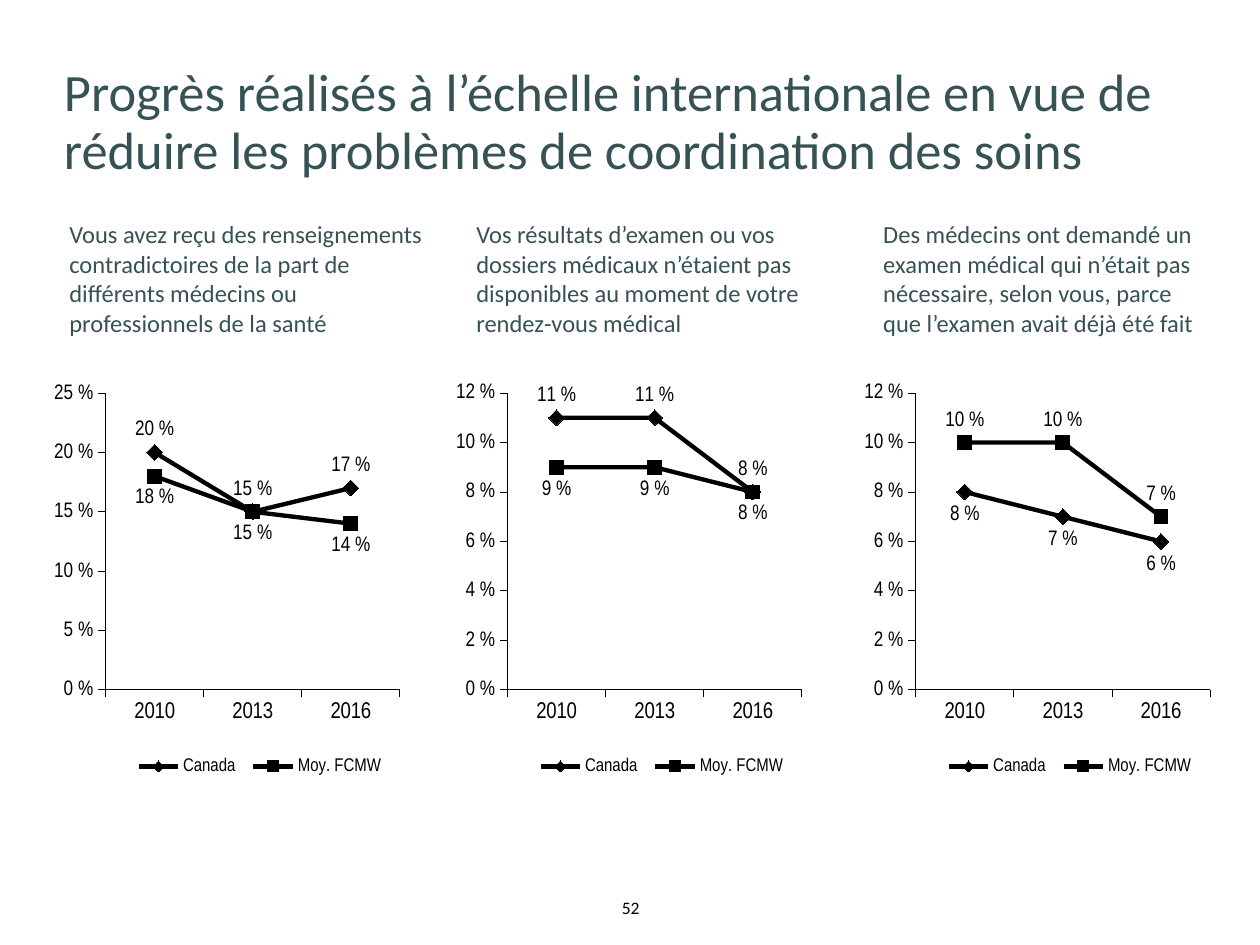
from lxml.etree import SubElement
from pptx import Presentation
from pptx.chart.data import CategoryChartData
from pptx.dml.color import RGBColor
from pptx.enum.chart import XL_CHART_TYPE, XL_LABEL_POSITION as LABEL, XL_LEGEND_POSITION as LEGEND
from pptx.enum.chart import XL_MARKER_STYLE as MARKER, XL_TICK_MARK as TICK
from pptx.enum.text import MSO_ANCHOR, PP_ALIGN
from pptx.oxml import parse_xml
from pptx.oxml.ns import nsdecls, qn
from pptx.util import Inches, Pt

PERCENT = "0\\ %"


def color(value):
    return RGBColor.from_string(value)


def set_layout(parent, index, inner, **area):
    for old in parent.findall(qn("c:layout")):
        parent.remove(old)
    layout = parse_xml(f"<c:layout {nsdecls('c')}><c:manualLayout/></c:layout>")
    settings = {"layoutTarget": "inner"} if inner else {}
    settings.update(xMode="edge", yMode="edge", **area)
    for name, value in settings.items():
        SubElement(layout[0], qn(f"c:{name}")).set("val", str(value))
    parent.insert(index, layout)


class SlideBuilder:
    """Holds the text and chart style and the page being built."""

    body_font, chart_font = "Calibri", "Arial Narrow"
    ink, black = "365254", "000000"

    def __init__(self, page):
        self.page = page

    def style(self, font, size, name, shade):
        font.size, font.name = Pt(size), name
        font.color.rgb = color(shade)

    def text(self, area, words, size, shade=ink, inset=0.12, spacing=None,
             align=PP_ALIGN.LEFT, anchor=MSO_ANCHOR.TOP):
        frame = self.page.shapes.add_textbox(*map(Inches, area)).text_frame
        frame.word_wrap, frame.vertical_anchor = True, anchor
        frame.margin_left = frame.margin_right = Inches(inset)
        frame.margin_top = frame.margin_bottom = Inches(min(inset, 0.12))
        para = frame.paragraphs[0]
        para.alignment, para.line_spacing = align, spacing
        for number, line in enumerate(words.split("\n")):
            if number:
                para.add_line_break()
            span = para.add_run()
            span.text = line
            self.style(span.font, size, self.body_font, shade)

    def axis(self, axis, size):
        axis.has_major_gridlines = False
        axis.major_tick_mark, axis.minor_tick_mark = TICK.OUTSIDE, TICK.NONE
        axis.format.line.color.rgb = color(self.black)
        axis.format.line.width = Pt(0.5)
        self.style(axis.tick_labels.font, size, self.chart_font, self.black)

    def series(self, series, marker, size, position):
        series.smooth = False
        series.format.line.color.rgb = color(self.black)
        series.format.line.width = Pt(2.5)
        series.marker.style, series.marker.size = marker, size
        for part in (series.marker.format.fill, series.marker.format.line.fill):
            part.solid()
            part.fore_color.rgb = color(self.black)
        labels = series.data_labels
        labels.show_value, labels.position = True, position
        labels.number_format, labels.number_format_is_linked = PERCENT, False
        self.style(labels.font, 12, self.chart_font, self.black)

    def chart(self, area, canada, average, top, step, positions):
        data = CategoryChartData(number_format=PERCENT)
        data.categories = ["2010", "2013", "2016"]
        data.add_series("Canada", canada)
        data.add_series("Moy. FCMW", average)
        chart = self.page.shapes.add_chart(
            XL_CHART_TYPE.LINE_MARKERS, *map(Inches, area), data).chart
        chart.has_title = False
        self.style(chart.font, 18, self.body_font, self.black)
        self.axis(chart.category_axis, 13)
        values = chart.value_axis
        self.axis(values, 12)
        values.minimum_scale, values.maximum_scale, values.major_unit = 0, top, step
        values.tick_labels.number_format = PERCENT
        values.tick_labels.number_format_is_linked = False
        chart.plots[0].vary_by_categories = False
        markers = (MARKER.DIAMOND, 9), (MARKER.SQUARE, 8)
        for series, marker, position in zip(chart.plots[0].series, markers, positions):
            self.series(series, *marker, position)
        chart.has_legend = True
        legend = chart.legend
        legend.position, legend.include_in_layout = LEGEND.BOTTOM, False
        self.style(legend.font, 10.5, self.chart_font, self.black)
        plot_area = chart.element.find(".//" + qn("c:plotArea"))
        legend_element = chart.element.find(".//" + qn("c:legend"))
        set_layout(plot_area, 0, True, x=0.14, y=0.15, w=0.83, h=0.62)
        set_layout(legend_element, 1, False, x=0.2, y=0.88, w=0.75, h=0.1)


def main():
    deck = Presentation()
    deck.slide_width, deck.slide_height = Inches(10), Inches(7.5)
    builder = SlideBuilder(deck.slides.add_slide(deck.slide_layouts[6]))
    builder.text((4.69, 7.12, 0.63, 0.17), "52", 10, builder.black, 0,
                 align=PP_ALIGN.CENTER, anchor=MSO_ANCHOR.MIDDLE)
    builder.text((0.41, 0.41, 9, 1.03),
                 "Progrès réalisés à l’échelle internationale en vue de "
                 "réduire les problèmes de coordination des soins",
                 30, inset=0.1, spacing=Pt(33))
    above_below = LABEL.ABOVE, LABEL.BELOW
    panels = [
        (0.43, 3.15, 0.43,
         "Vous avez reçu des renseignements contradictoires de la part de "
         "différents médecins ou professionnels de la santé",
         (0.20, 0.15, 0.17), (0.18, 0.15, 0.14), 0.25, 0.05, above_below),
        (3.66, 2.91, 3.62,
         "Vos résultats d’examen ou vos dossiers médicaux n’étaient pas "
         "disponibles au moment de votre rendez-vous médical",
         (0.11, 0.11, 0.08), (0.09, 0.09, 0.08), 0.12, 0.02, above_below),
        (6.89, 3.23, 6.86,
         "Des médecins ont demandé un examen médical qui n’était pas "
         "nécessaire, selon vous, parce\nque l’examen avait déjà été fait",
         (0.08, 0.07, 0.06), (0.10, 0.10, 0.07), 0.12, 0.02, above_below[::-1]),
    ]
    for text_left, text_width, chart_left, question, *figures in panels:
        builder.text((text_left, 1.62, text_width, 1.18), question, 14)
        builder.chart((chart_left, 2.55, 2.83, 3.8), *figures)
    deck.save("out.pptx")


if __name__ == "__main__":
    main()
